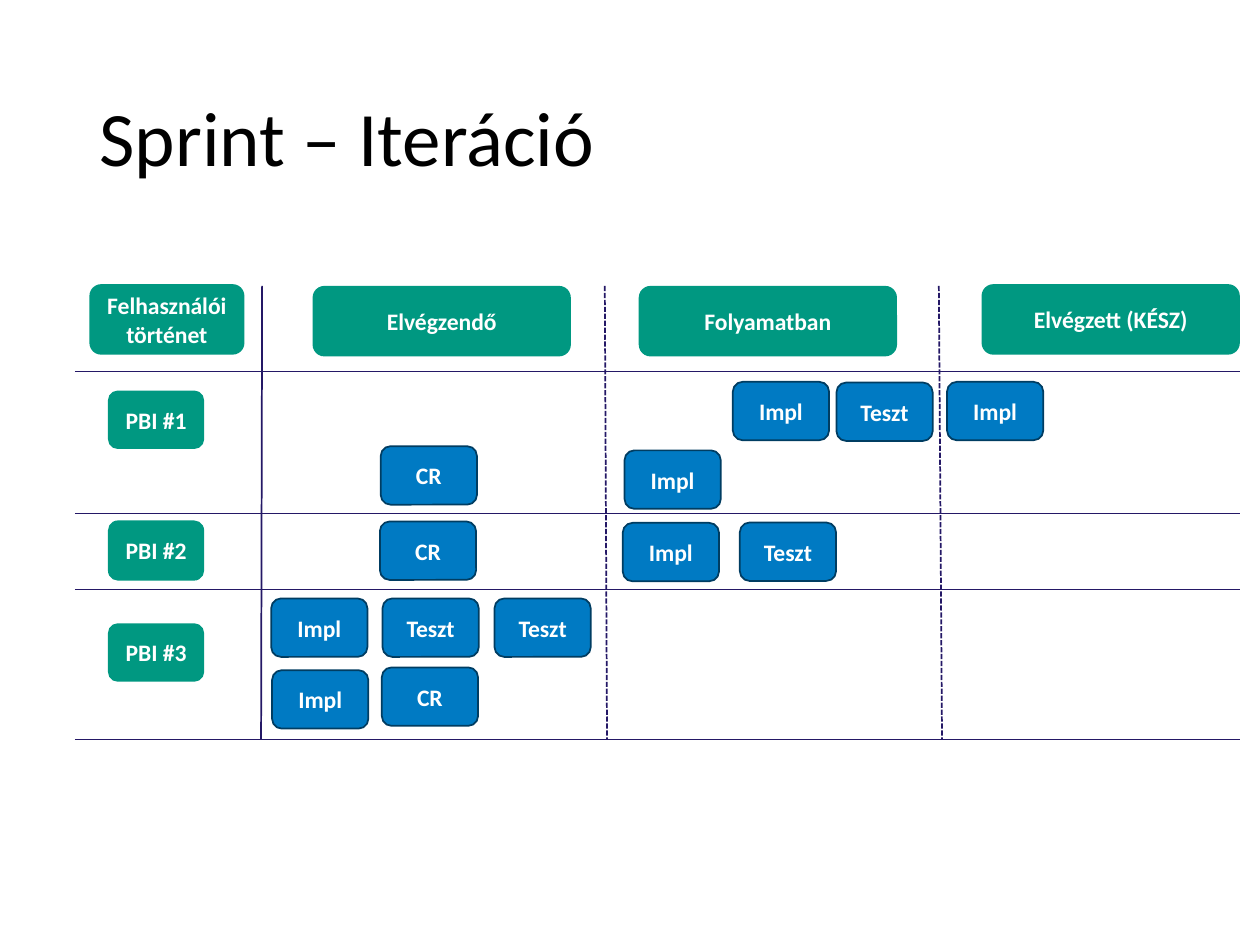
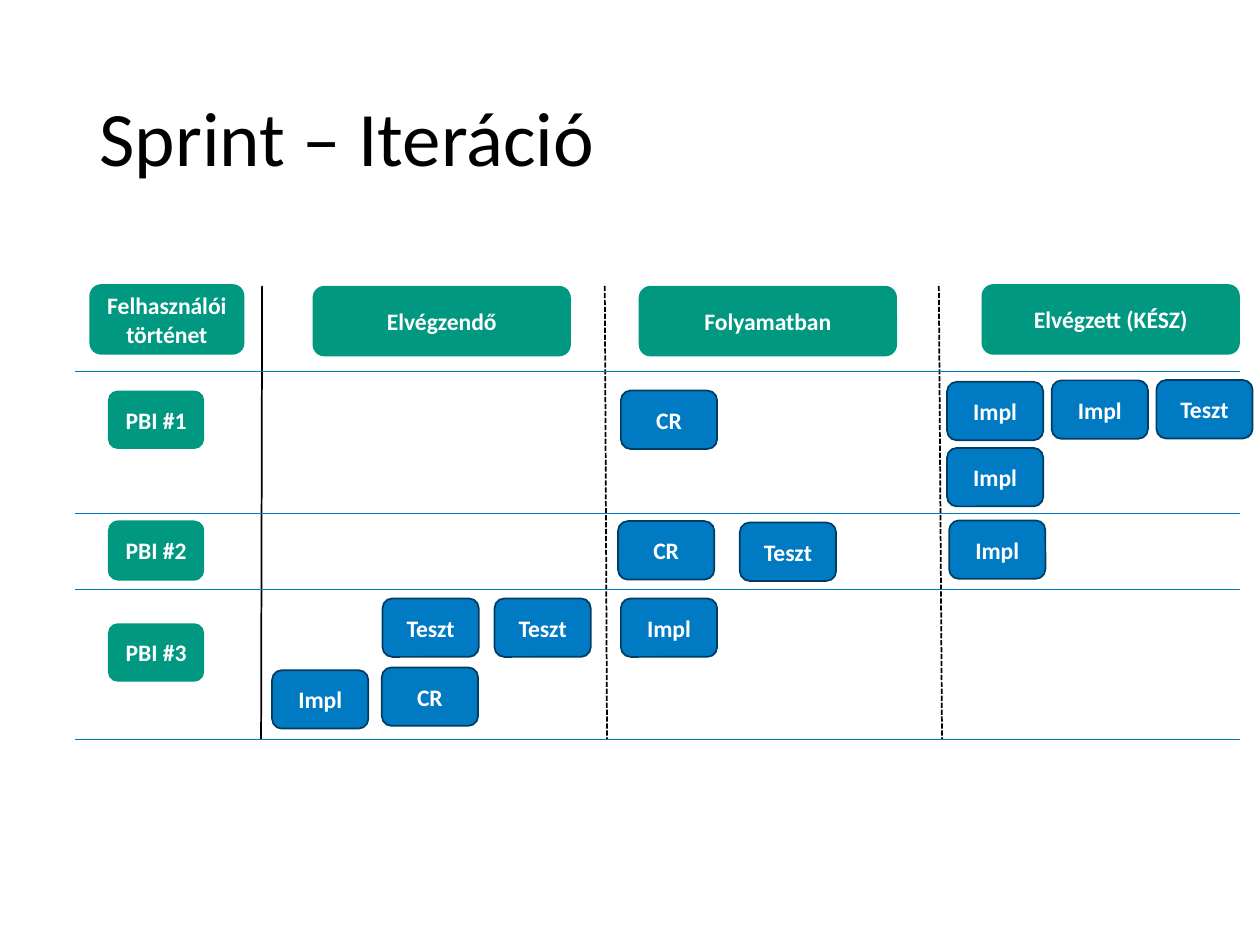
from lxml.etree import SubElement
from pptx import Presentation
from pptx.dml.color import RGBColor
from pptx.enum.dml import MSO_LINE
from pptx.enum.shapes import MSO_CONNECTOR, MSO_SHAPE
from pptx.enum.text import MSO_ANCHOR, MSO_AUTO_SIZE, PP_ALIGN
from pptx.oxml.ns import qn
from pptx.util import Pt

FONT = "Calibri"
BLACK, WHITE = "000000", "FFFFFF"
GREEN, BLUE, DARK_BLUE, NAVY = "009881", "007AC3", "003D62", "241866"

TITLE = "Sprint – Iteráció"
TITLE_BOX = (49.7, 28.8, 620.6, 104.4)

# Text, left, top, width
HEADER_HEIGHT = 40.3
HEADERS = [
    ("Felhasználói\ntörténet", 51.1, 162.4, 88.6),
    ("Elvégzendő", 178.6, 163.4, 147.6),
    ("Folyamatban", 365, 163.4, 147.6),
    ("Elvégzett (KÉSZ)", 560.9, 162.4, 147.6),
]

# Text, top, height
STORY_LEFT = 61.7
STORIES = [("PBI #1", 223.2, 33.4), ("PBI #2", 297.4, 34.4), ("PBI #3", 356.2, 33.4)]

# Cards are text, left, top
CARD_WIDTH, CARD_HEIGHT = 55, 33.4
SHARED_CARDS = [
    ("Impl", 541.2, 218.2),
    ("Teszt", 422.8, 298.6),
    ("Teszt", 218.6, 342),
    ("Teszt", 282.6, 342),
    ("CR", 218.2, 381.4),
    ("Impl", 155.5, 383),
]
SPRINTS = [
    {
        "column_color": NAVY,
        "row_color": NAVY,
        "cards": [
            ("Impl", 418.8, 218.2),
            ("Teszt", 478, 218.6),
            ("CR", 217.6, 255),
            ("Impl", 356.9, 257.4),
            ("CR", 217.1, 298),
            ("Impl", 355.9, 298.8),
            ("Impl", 155, 342),
        ],
    },
    {
        "column_color": BLACK,
        "row_color": BLUE,
        "cards": [
            ("Impl", 601, 217.4),
            ("Teszt", 660.8, 217.2),
            ("CR", 354.8, 223.2),
            ("Impl", 541.2, 256),
            ("CR", 353.2, 297.8),
            ("Impl", 542.4, 297.4),
            ("Impl", 354.8, 342),
        ],
    },
]

BOARD_LEFT, BOARD_RIGHT = 42.8, 708.6
BOARD_TOP, BOARD_BOTTOM = 163.4, 422.6
ROW_LINES = [212.4, 293.4, 336.8, BOARD_BOTTOM]
# Left at the top, left at the bottom, dash
COLUMN_LINES = [
    (149.8, 149.2, None),
    (345.6, 346.9, MSO_LINE.SQUARE_DOT),
    (536.5, 538.3, MSO_LINE.SQUARE_DOT),
]


def rgb(color):
    return RGBColor.from_string(color)


def write(text_frame, text, size=13.5, color=WHITE, bold=True,
          align=PP_ALIGN.CENTER, line_spacing=None):
    """Fill the frame with one paragraph for each line of text."""
    text_frame.text = text
    text_frame.word_wrap = True
    text_frame.auto_size = MSO_AUTO_SIZE.NONE
    text_frame.vertical_anchor = MSO_ANCHOR.MIDDLE
    for paragraph in text_frame.paragraphs:
        paragraph.alignment = align
        paragraph.line_spacing = line_spacing
        for run in paragraph.runs:
            run.font.name = FONT
            run.font.size = Pt(size)
            run.font.bold = bold
            run.font.color.rgb = rgb(color)


def add_box(slide, text, left, top, width, height, fill, outline=None):
    shape = slide.shapes.add_shape(
        MSO_SHAPE.ROUNDED_RECTANGLE, Pt(left), Pt(top), Pt(width), Pt(height))
    shape.shadow.inherit = False
    shape.fill.solid()
    shape.fill.fore_color.rgb = rgb(fill)
    if outline:
        shape.line.color.rgb = rgb(outline)
        shape.line.width = Pt(1)
    else:
        shape.line.fill.background()
    frame = shape.text_frame
    frame.margin_left = frame.margin_right = frame.margin_top = frame.margin_bottom = 0
    write(frame, text)


def add_line(slide, start, end, color, width, dash=None):
    connector = slide.shapes.add_connector(
        MSO_CONNECTOR.STRAIGHT, *(Pt(value) for value in start + end))
    connector.line.color.rgb = rgb(color)
    connector.line.width = Pt(width)
    if dash:
        connector.line.dash_style = dash
    SubElement(connector._element.spPr, qn("a:effectLst"))


def add_title(slide):
    title = slide.shapes.title
    title.left, title.top, title.width, title.height = (Pt(value) for value in TITLE_BOX)
    write(title.text_frame, TITLE, size=44, color=BLACK, bold=False,
          align=PP_ALIGN.LEFT, line_spacing=0.9)


def add_board(slide, sprint):
    for top_left, bottom_left, dash in COLUMN_LINES:
        add_line(slide, (top_left, BOARD_TOP), (bottom_left, BOARD_BOTTOM),
                 sprint["column_color"], 1, dash)
    for top in ROW_LINES:
        add_line(slide, (BOARD_LEFT, top), (BOARD_RIGHT, top), sprint["row_color"], 0.5)
    for text, left, top, width in HEADERS:
        add_box(slide, text, left, top, width, HEADER_HEIGHT, GREEN)
    for text, top, height in STORIES:
        add_box(slide, text, STORY_LEFT, top, CARD_WIDTH, height, GREEN)
    for text, left, top in SHARED_CARDS + sprint["cards"]:
        add_box(slide, text, left, top, CARD_WIDTH, CARD_HEIGHT, BLUE, DARK_BLUE)


def main():
    presentation = Presentation()
    presentation.slide_width, presentation.slide_height = Pt(720), Pt(540)
    title_only = presentation.slide_layouts[5]
    for sprint in SPRINTS:
        slide = presentation.slides.add_slide(title_only)
        add_title(slide)
        add_board(slide, sprint)
    presentation.save("out.pptx")


if __name__ == "__main__":
    main()
